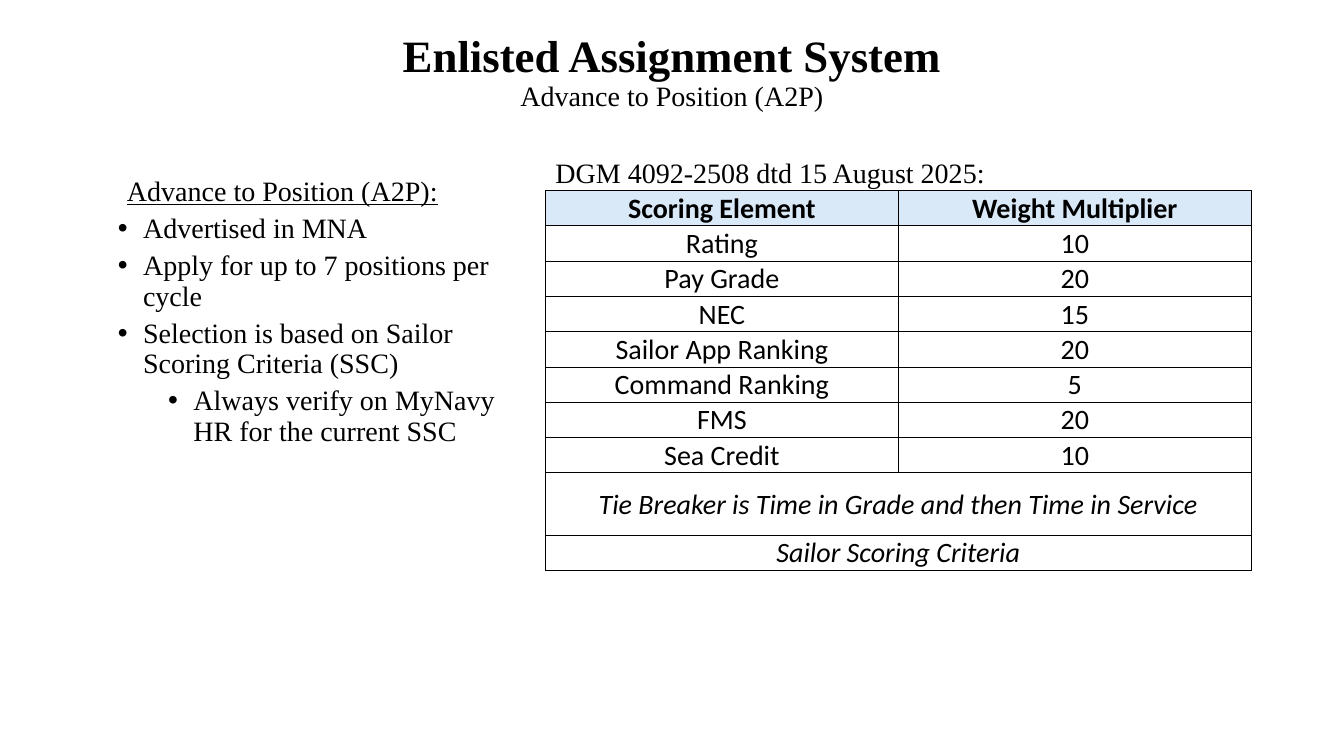
from copy import deepcopy

from lxml.etree import SubElement
from pptx import Presentation
from pptx.dml.color import RGBColor
from pptx.enum.text import MSO_ANCHOR as Anchor, MSO_AUTO_SIZE as AutoSize, PP_ALIGN as Align
from pptx.oxml.ns import qn
from pptx.util import Inches, Pt

SERIF = {"name": "Times New Roman", "size": Pt(20)}
SANS = {"name": "Calibri", "size": Pt(20)}
BLACK = "000000"
HEADER_FILL = "DAE9F8"

# Text, level, left margin and first-line indent in inches
ADVANCE_POINTS = [
    ("Advance to Position (A2P):", 0, 0.09, 0),
    ("Advertised in MNA", 1, 0.25, -0.25),
    ("Apply for up to 7 positions per cycle", 1, 0.25, -0.25),
    ("Selection is based on Sailor Scoring Criteria (SSC)", 1, 0.25, -0.25),
    ("Always verify on MyNavy HR for the current SSC", 2, 0.75, -0.25),
]
SCORING_ROWS = [
    ("Scoring Element", "Weight Multiplier"),
    ("Rating", "10"),
    ("Pay Grade", "20"),
    ("NEC", "15"),
    ("Sailor App Ranking", "20"),
    ("Command Ranking", "5"),
    ("FMS", "20"),
    ("Sea Credit", "10"),
    ("Tie Breaker is Time in Grade and then Time in Service",),
    ("Sailor Scoring Criteria",),
]
ROW_HEIGHT = 0.35
TIE_BREAKER_ROW, TIE_BREAKER_HEIGHT = 8, 0.62


def color(value):
    return RGBColor.from_string(value)


def set_values(target, values):
    for name, value in values.items():
        setattr(target, name, value)


def add_run(paragraph, text, values):
    run = paragraph.add_run()
    run.text = text
    set_values(run.font, values)
    run.font.color.rgb = color(BLACK)
    return run


def place(shape, left, top, width, height):
    set_values(shape, {"left": Inches(left), "top": Inches(top),
                       "width": Inches(width), "height": Inches(height)})


def add_text_box(slide, left, top, width, height):
    shape = slide.shapes.add_textbox(*map(Inches, (left, top, width, height)))
    shape.text_frame.word_wrap = True
    return shape.text_frame


def add_title(slide, heading, subtitle):
    title = slide.shapes.title
    place(title, 0, 0, 13.33, 1.45)
    title.text_frame.vertical_anchor = Anchor.MIDDLE
    paragraph = title.text_frame.paragraphs[0]
    set_values(paragraph, {"alignment": Align.CENTER, "line_spacing": 0.9})
    run = add_run(paragraph, heading, SERIF | {"size": Pt(32), "bold": True})
    paragraph.add_line_break()
    # The break takes the size of the heading
    paragraph._p.find(qn("a:br")).append(deepcopy(run._r.rPr))
    add_run(paragraph, subtitle, SERIF | {"bold": False})


def set_indent(paragraph, margin, indent):
    properties = paragraph._p.get_or_add_pPr()
    properties.set("marL", str(Inches(margin)))
    properties.set("indent", str(Inches(indent)))
    return properties


def add_points(slide, points):
    frame = add_text_box(slide, 1.07, 1.71, 4.25, 3.72)
    for index, (text, level, margin, indent) in enumerate(points):
        paragraph = frame.add_paragraph() if index else frame.paragraphs[0]
        set_values(paragraph, {"level": level, "line_spacing": 0.9})
        properties = set_indent(paragraph, margin, indent)
        if index:
            paragraph.space_before = Pt(5)
            SubElement(properties, qn("a:buFont")).set("typeface", "Arial")
            SubElement(properties, qn("a:buChar")).set("char", "•")
        add_run(paragraph, text, SERIF | {"underline": level == 0})


def set_borders(cell):
    properties = cell._tc.get_or_add_tcPr()
    for side in ("lnL", "lnR", "lnT", "lnB"):
        line = SubElement(properties, qn(f"a:{side}"), w=str(Pt(0.5)))
        fill = SubElement(line, qn("a:solidFill"))
        SubElement(fill, qn("a:srgbClr")).set("val", BLACK)


def format_cell(cell, is_header):
    set_values(cell, {"vertical_anchor": Anchor.MIDDLE, "margin_left": Inches(0.01),
                      "margin_right": Inches(0.01), "margin_top": Inches(0.01),
                      "margin_bottom": 0})
    set_borders(cell)
    if is_header:
        cell.fill.solid()
        cell.fill.fore_color.rgb = color(HEADER_FILL)
    else:
        cell.fill.background()


def add_scoring_table(slide, rows):
    height = ROW_HEIGHT * (len(rows) - 1) + TIE_BREAKER_HEIGHT
    table = slide.shapes.add_table(
        len(rows), 2, Inches(5.41), Inches(1.89), Inches(7), Inches(height)).table
    set_values(table, {"first_row": False, "horz_banding": False})
    for row_index, texts in enumerate(rows):
        is_tie_breaker = row_index == TIE_BREAKER_ROW
        table.rows[row_index].height = Inches(
            TIE_BREAKER_HEIGHT if is_tie_breaker else ROW_HEIGHT)
        is_note = len(texts) == 1
        for cell in table.rows[row_index].cells:
            format_cell(cell, row_index == 0)
        if is_note:
            table.cell(row_index, 0).merge(table.cell(row_index, 1))
        for column_index, text in enumerate(texts):
            paragraph = table.cell(row_index, column_index).text_frame.paragraphs[0]
            paragraph.alignment = Align.CENTER
            add_run(paragraph, text, SANS | {"bold": row_index == 0, "italic": is_note})


def add_caption(slide, text):
    frame = add_text_box(slide, 5.41, 1.49, 6.9, 0.44)
    frame.auto_size = AutoSize.SHAPE_TO_FIT_TEXT
    add_run(frame.paragraphs[0], text, SERIF)


def main():
    presentation = Presentation()
    set_values(presentation, {"slide_width": Inches(13.33), "slide_height": Inches(7.5)})
    slide = presentation.slides.add_slide(presentation.slide_layouts.get_by_name("Title Only"))

    # Heading
    add_title(slide, "Enlisted Assignment System", "Advance to Position (A2P)")
    # Left column
    add_points(slide, ADVANCE_POINTS)
    # Scoring criteria
    add_scoring_table(slide, SCORING_ROWS)
    add_caption(slide, "DGM 4092-2508 dtd 15 August 2025:")

    presentation.save("out.pptx")


if __name__ == "__main__":
    main()
